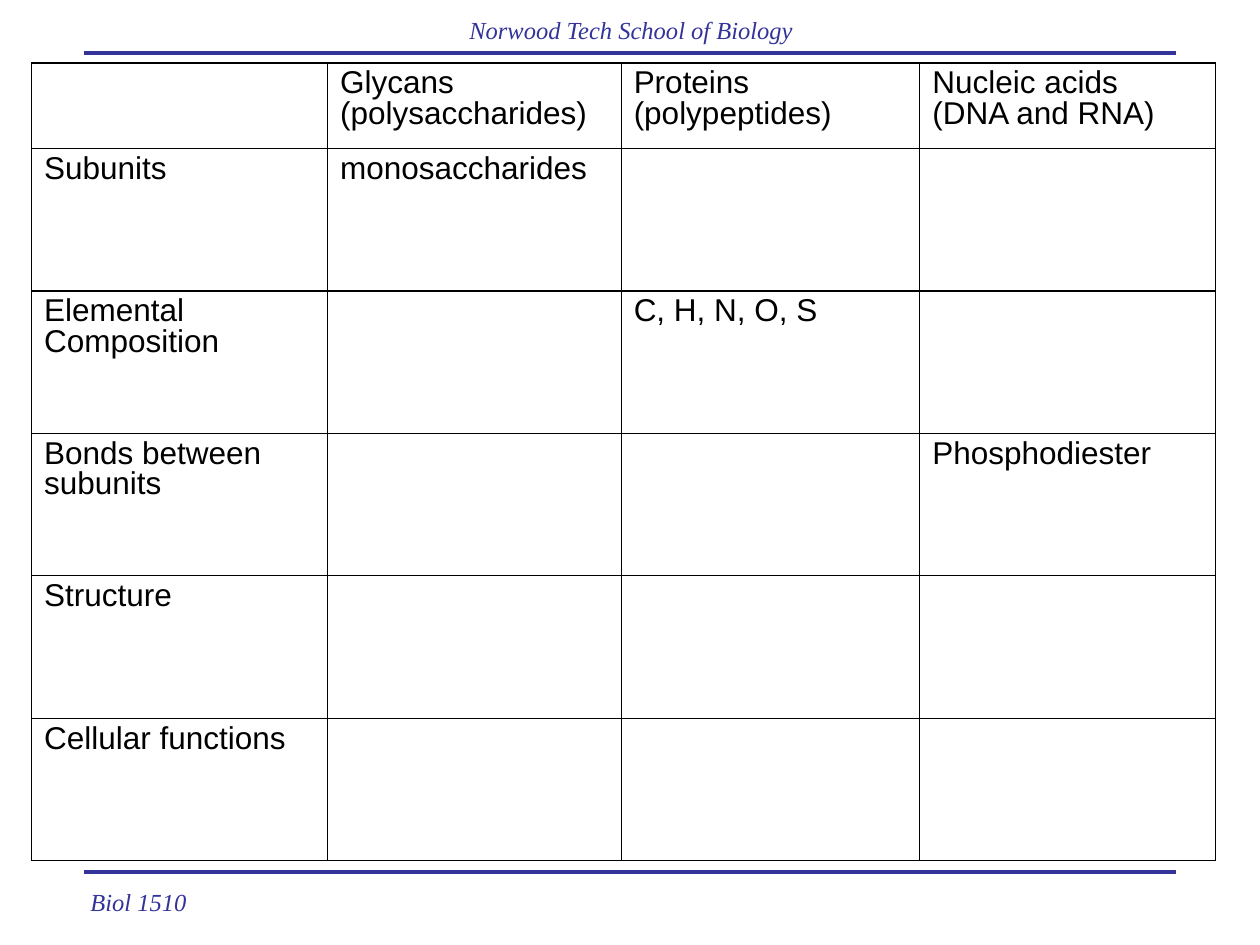
from dataclasses import dataclass

from lxml import etree
from pptx import Presentation
from pptx import util as u
from pptx.dml.color import RGBColor
from pptx.enum import shapes, text
from pptx.oxml import ns


@dataclass(frozen=True)
class Theme:
    accent: str = "333399"
    ink: str = "000000"
    caption_font: str = "Times New Roman"
    table_font: str = "Arial"
    caption_size: float = 14
    table_size: float = 18
    rule_width: float = 2.25
    border_width: float = 0.75


THEME = Theme()
CAPTION = {"name": THEME.caption_font, "size": u.Pt(THEME.caption_size), "italic": True}
CELL = {"name": THEME.table_font, "size": u.Pt(THEME.table_size), "bold": False}
COLUMN_WIDTHS = [2.35, 2.33, 2.37, 2.35]
ROW_HEIGHTS = [0.68] + [1.13] * 5
MACROMOLECULES = [
    ["", "Glycans (polysaccharides)", "Proteins (polypeptides)", "Nucleic acids\n(DNA and RNA)"],
    ["Subunits", "monosaccharides", "", ""],
    ["Elemental Composition", "", "C, H, N, O, S", ""],
    ["Bonds between subunits", "", "", "Phosphodiester"],
    ["Structure", "", "", ""],
    ["Cellular functions", "", "", ""],
]


def write(frame, words, font_format, color, spacing, align):
    frame.text = words
    for paragraph in frame.paragraphs:
        paragraph.line_spacing = spacing
        paragraph.alignment = align
        for run in paragraph.runs:
            for key, value in font_format.items():
                setattr(run.font, key, value)
            run.font.color.rgb = RGBColor.from_string(color)


def add_rule(slide, y):
    rule = slide.shapes.add_connector(
        shapes.MSO_CONNECTOR.STRAIGHT, u.Inches(0.67), u.Inches(y), u.Inches(9.33), u.Inches(y))
    rule.line.color.rgb = RGBColor.from_string(THEME.accent)
    rule.line.width = u.Pt(THEME.rule_width)
    etree.SubElement(rule._element.spPr, ns.qn("a:effectLst"))


def add_caption(slide, words, box, align):
    frame = slide.shapes.add_textbox(*map(u.Inches, box)).text_frame
    layout = {"word_wrap": True, "margin_top": u.Inches(0.06), "margin_bottom": u.Inches(0.05)}
    for key, value in layout.items():
        setattr(frame, key, value)
    write(frame, words, CAPTION, THEME.accent, 0.93, align)


def add_borders(cell):
    properties = cell._tc.get_or_add_tcPr()
    for position, side in enumerate(("lnL", "lnR", "lnT", "lnB")):
        border = etree.Element(ns.qn(f"a:{side}"), w=str(u.Pt(THEME.border_width)))
        fill = etree.SubElement(border, ns.qn("a:solidFill"))
        etree.SubElement(fill, ns.qn("a:srgbClr"), val=THEME.ink)
        properties.insert(position, border)


def add_grid(slide):
    grid = slide.shapes.add_table(
        len(ROW_HEIGHTS), len(COLUMN_WIDTHS), u.Inches(0.25), u.Inches(0.5),
        u.Inches(sum(COLUMN_WIDTHS)), u.Inches(sum(ROW_HEIGHTS))).table
    grid.first_row = grid.horz_banding = False
    for column, width in zip(grid.columns, COLUMN_WIDTHS):
        column.width = u.Inches(width)
    for row, height, entries in zip(grid.rows, ROW_HEIGHTS, MACROMOLECULES):
        row.height = u.Inches(height)
        for cell, entry in zip(row.cells, entries):
            cell.fill.background()
            add_borders(cell)
            if entry:
                write(cell.text_frame, entry, CELL, THEME.ink, 0.87, text.PP_ALIGN.LEFT)


def main():
    deck = Presentation()
    deck.slide_width, deck.slide_height = u.Inches(10), u.Inches(7.5)
    slide = deck.slides.add_slide(deck.slide_layouts[6])
    for y in (0.42, 6.92):
        add_rule(slide, y)
    add_caption(slide, "Norwood Tech School of Biology", (3.3, 0.08, 3.42, 0.42), text.PP_ALIGN.CENTER)
    add_caption(slide, "Biol 1510", (0.5, 7, 1.08, 0.25), text.PP_ALIGN.RIGHT)
    add_grid(slide)
    deck.save("out.pptx")


if __name__ == "__main__":
    main()
